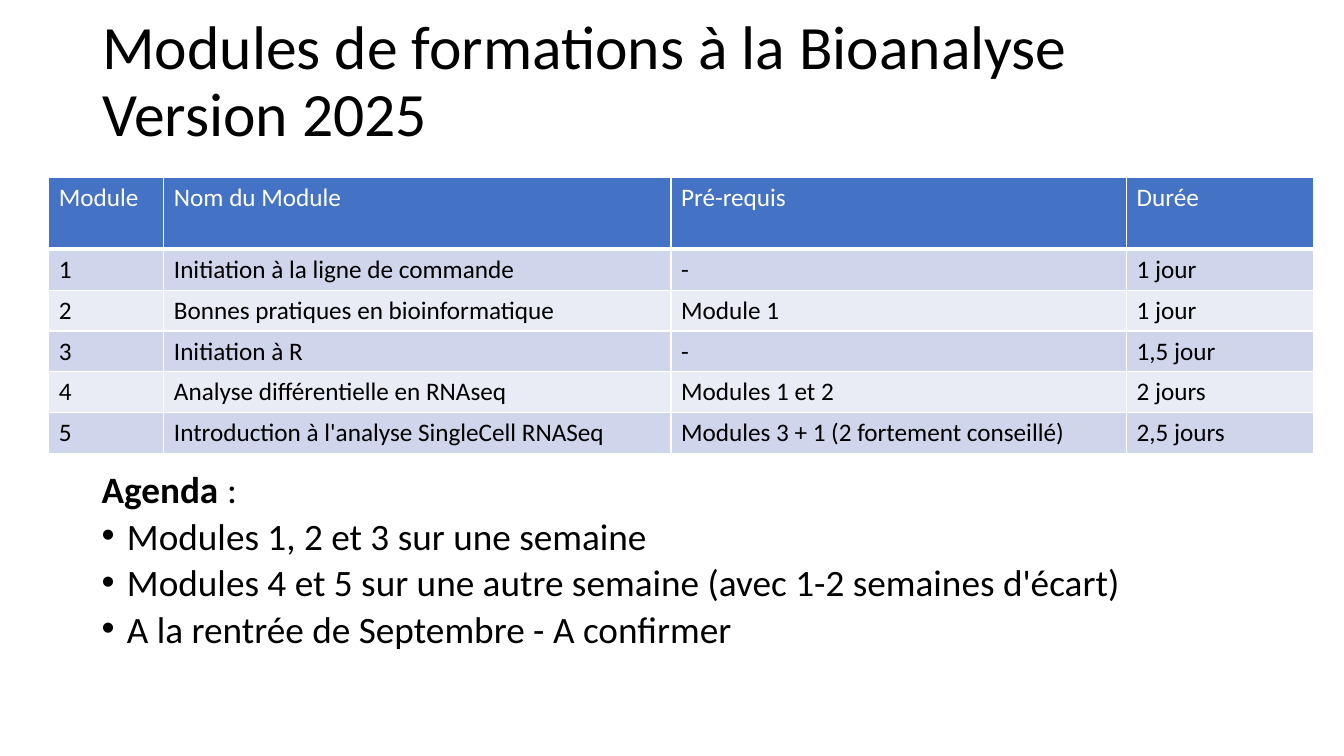
"""Build the slide listing the 2025 bioanalysis training modules and their agenda."""
import pptx
import pptx.dml.color
import pptx.enum.text
import pptx.oxml.ns
import pptx.util
from lxml import etree

Cm = pptx.util.Cm
Pt = pptx.util.Pt
RGBColor = pptx.dml.color.RGBColor

TITLE = "Modules de formations à la Bioanalyse \vVersion 2025"
MODULES = [
    ("Module", "Nom du Module", "Pré-requis", "Durée"),
    ("1", "Initiation à la ligne de commande", "-", "1 jour"),
    ("2", "Bonnes pratiques en bioinformatique", "Module 1", "1 jour"),
    ("3", "Initiation à R", "-", "1,5 jour"),
    ("4", "Analyse différentielle en RNAseq", "Modules 1 et 2", "2 jours"),
    ("5", "Introduction à l'analyse SingleCell RNASeq",
     "Modules 3 + 1 (2 fortement conseillé)", "2,5 jours"),
]
AGENDA_HEADING = ("Agenda", " :")
AGENDA_ITEMS = [
    "Modules 1, 2 et 3 sur une semaine",
    "Modules 4 et 5 sur une autre semaine (avec 1-2 semaines d'écart)",
    "A la rentrée de Septembre - A confirmer",
]

FONT = "Calibri"
BLACK = RGBColor(0x00, 0x00, 0x00)
WHITE = RGBColor(0xFF, 0xFF, 0xFF)
HEADER_BLUE = RGBColor(0x44, 0x72, 0xC4)
BANDS = (RGBColor(0xE9, 0xEB, 0xF5), RGBColor(0xCF, 0xD5, 0xEA))

COLUMN_WIDTHS = (2.9, 12.78, 11.48, 4.72)
HEADER_HEIGHT, ROW_HEIGHT = 1.8, 1.03
INDENT = Cm(0.64)


def add_text_frame(slide, left, top, width, height):
    text_frame = slide.shapes.add_textbox(Cm(left), Cm(top), Cm(width), Cm(height)).text_frame
    text_frame.word_wrap = True
    return text_frame


def format_runs(paragraph, size, color=BLACK):
    for run in paragraph.runs:
        run.font.name = FONT
        run.font.size = Pt(size)
        run.font.color.rgb = color


def add_borders(cell, bottom_width):
    properties = cell._tc.get_or_add_tcPr()
    qn = pptx.oxml.ns.qn
    for side, width in (("L", 1), ("R", 1), ("T", 1), ("B", bottom_width)):
        line = etree.SubElement(properties, qn("a:ln" + side), w=str(Pt(width)))
        fill = etree.SubElement(line, qn("a:solidFill"))
        etree.SubElement(fill, qn("a:srgbClr"), val=str(WHITE))


def add_title(slide):
    text_frame = add_text_frame(slide, 2.33, 0.25, 29.21, 3.68)
    text_frame.vertical_anchor = pptx.enum.text.MSO_ANCHOR.MIDDLE
    text_frame.text = TITLE
    paragraph = text_frame.paragraphs[0]
    paragraph.line_spacing = 0.9
    format_runs(paragraph, 44)


def add_module_table(slide):
    height = HEADER_HEIGHT + ROW_HEIGHT * (len(MODULES) - 1)
    table = slide.shapes.add_table(
        len(MODULES), len(COLUMN_WIDTHS), Cm(1.23), Cm(4.48),
        Cm(sum(COLUMN_WIDTHS)), Cm(height)).table
    for column, width in zip(table.columns, COLUMN_WIDTHS):
        column.width = Cm(width)
    for row_index, values in enumerate(MODULES):
        is_header = row_index == 0
        table.rows[row_index].height = Cm(HEADER_HEIGHT if is_header else ROW_HEIGHT)
        for cell, value in zip(table.rows[row_index].cells, values):
            add_borders(cell, 3 if is_header else 1)
            cell.fill.solid()
            cell.fill.fore_color.rgb = HEADER_BLUE if is_header else BANDS[row_index % 2]
            cell.text_frame.text = value
            paragraph = cell.text_frame.paragraphs[0]
            format_runs(paragraph, 18, WHITE if is_header else BLACK)
            paragraph.runs[0].font.bold = False


def add_agenda(slide):
    text_frame = add_text_frame(slide, 2.31, 11.91, 29.21, 4.98)
    heading = text_frame.paragraphs[0]
    for text in AGENDA_HEADING:
        heading.add_run().text = text
    heading.runs[0].font.bold = True
    for text in AGENDA_ITEMS:
        text_frame.add_paragraph().text = text
    for index, paragraph in enumerate(text_frame.paragraphs):
        paragraph.line_spacing = 0.73
        paragraph.space_before = Pt(10)
        format_runs(paragraph, 26.6)
        properties = paragraph._p.get_or_add_pPr()
        properties.set("marL", str(INDENT))
        properties.set("indent", str(-INDENT))
        if index > 0:
            qn = pptx.oxml.ns.qn
            etree.SubElement(properties, qn("a:buFont"), typeface="Arial")
            etree.SubElement(properties, qn("a:buChar"), char="•")


def main():
    presentation = pptx.Presentation()
    presentation.slide_width, presentation.slide_height = Cm(33.87), Cm(19.05)
    slide = presentation.slides.add_slide(presentation.slide_layouts[6])
    add_title(slide)
    add_agenda(slide)
    add_module_table(slide)
    presentation.save("out.pptx")


if __name__ == "__main__":
    main()
